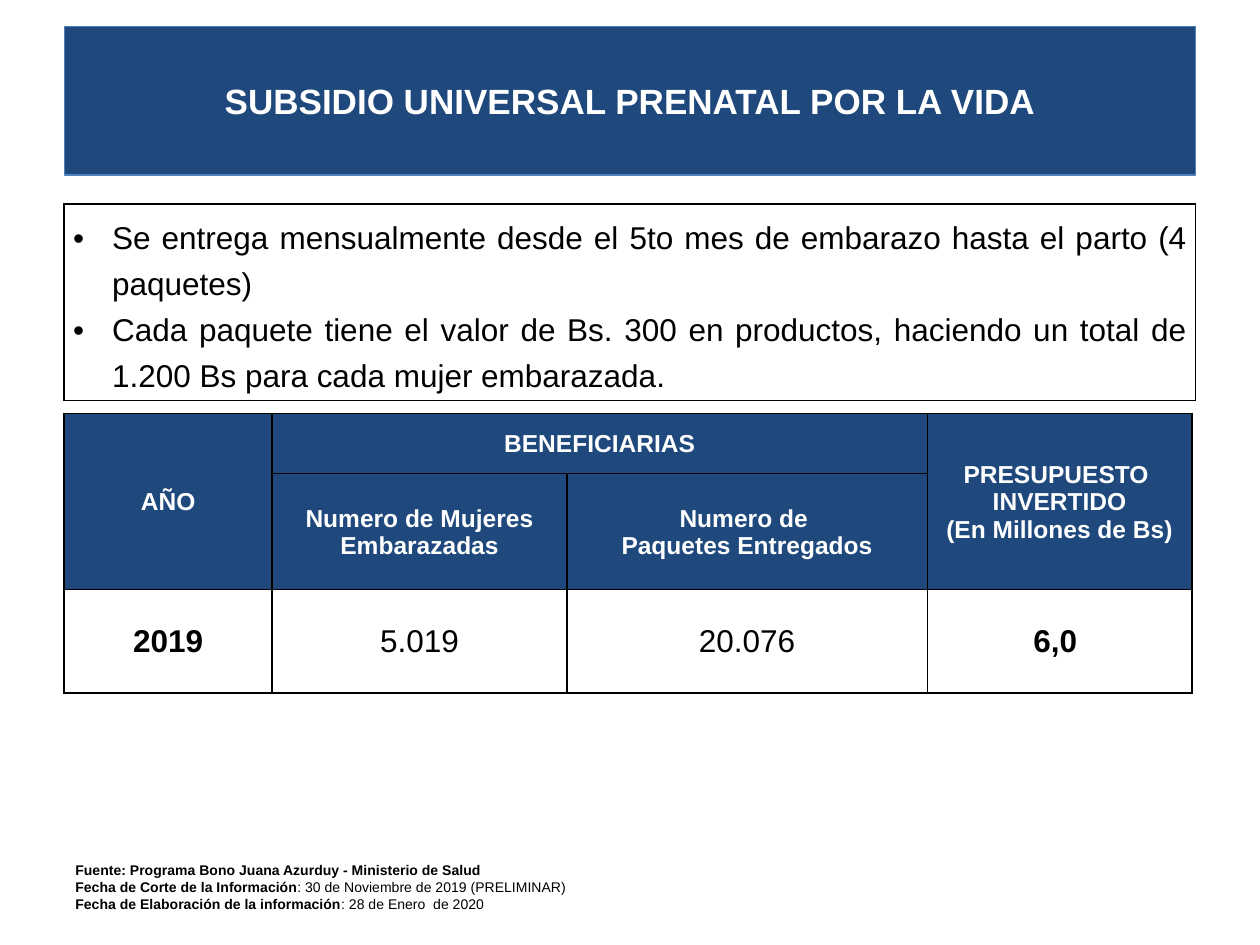
from lxml import etree
from pptx import Presentation
from pptx import util as u
from pptx.dml import color
from pptx.enum import text
from pptx.oxml import ns

NAVY, BLUE, WHITE, BLACK = "1F497D", "4F81BD", "FFFFFF", "000000"
LEFT, WIDTH = 0.51, 8.98
CENTER = {"alignment": text.PP_ALIGN.CENTER}
BULLET = {"alignment": text.PP_ALIGN.JUSTIFY, "line_spacing": 1.3}


def rgb(value):
    return color.RGBColor.from_string(value)


def apply(target, values):
    for name, value in values.items():
        setattr(target, name, value)


def paint(fill, value):
    fill.solid()
    fill.fore_color.rgb = rgb(value)


def add_element(parent, tag, **attributes):
    return etree.SubElement(parent, ns.qn(tag), attributes)


class SlideBuilder:
    font = "Arial"

    def __init__(self, deck):
        self.page = deck.slides.add_slide(deck.slide_layouts[5])

    def fill_text(self, frame, lines, size, ink, bold=False, layout=None, bullet=False):
        for index, line in enumerate(lines):
            para = frame.paragraphs[0] if index == 0 else frame.add_paragraph()
            apply(para, layout or {})
            spans = [(line, bold)] if isinstance(line, str) else line
            for content, weight in spans:
                for part, piece in enumerate(content.split("\v")):
                    if part:
                        para.add_line_break()
                    span = para.add_run()
                    span.text = piece
                    apply(span.font, {"name": self.font, "size": u.Pt(size), "bold": weight})
                    span.font.color.rgb = rgb(ink)
            if bullet:
                properties = para._p.get_or_add_pPr()
                properties.set("marL", str(u.Inches(0.31)))
                properties.set("indent", str(-u.Inches(0.31)))
                add_element(properties, "a:buFont", typeface=self.font)
                add_element(properties, "a:buChar", char="•")

    def place(self, shape, left, top, width, height):
        apply(shape, {"left": u.Inches(left), "top": u.Inches(top),
                      "width": u.Inches(width), "height": u.Inches(height)})

    def title(self, content, *area):
        box = self.page.shapes.title
        self.place(box, *area)
        paint(box.fill, NAVY)
        box.line.color.rgb = rgb(BLUE)
        box.line.width = u.Pt(0.75)
        apply(box.text_frame, {"vertical_anchor": text.MSO_ANCHOR.MIDDLE, "word_wrap": True,
                               "auto_size": text.MSO_AUTO_SIZE.NONE})
        self.fill_text(box.text_frame, [content], 20, WHITE, True, CENTER)

    def table(self, left, top, columns, rows):
        area = map(u.Inches, (left, top, sum(columns), sum(rows)))
        grid = self.page.shapes.add_table(len(rows), len(columns), *area).table
        apply(grid, {"first_row": False, "horz_banding": False})
        for column, width in zip(grid.columns, columns):
            column.width = u.Inches(width)
        for row, height in zip(grid.rows, rows):
            row.height = u.Inches(height)
        return grid

    def cell(self, cell, fill, margins):
        names = ("margin_left", "margin_top", "margin_right", "margin_bottom")
        apply(cell, dict(zip(names, map(u.Inches, margins))))
        cell.vertical_anchor = text.MSO_ANCHOR.MIDDLE
        properties = cell._tc.get_or_add_tcPr()
        for side in ("a:lnL", "a:lnR", "a:lnT", "a:lnB"):
            border = add_element(properties, side, w=str(u.Pt(1)))
            add_element(add_element(border, "a:solidFill"), "a:srgbClr", val=BLACK)
        paint(cell.fill, fill)

    def note(self, lines, size, *area):
        box = self.page.shapes.add_textbox(*map(u.Inches, area))
        apply(box.text_frame, {"word_wrap": True, "auto_size": text.MSO_AUTO_SIZE.SHAPE_TO_FIT_TEXT})
        self.fill_text(box.text_frame, lines, size, BLACK, True)


def add_description(builder):
    cell = builder.table(LEFT, 1.62, [WIDTH], [1.56]).cell(0, 0)
    builder.cell(cell, WHITE, (0.07, 0, 0.07, 0))
    builder.fill_text(cell.text_frame, [
        "Se entrega mensualmente desde el 5to mes de embarazo hasta el parto (4 paquetes) ",
        "Cada paquete tiene el valor de Bs. 300 en productos, haciendo un total de "
        "1.200 Bs para cada mujer embarazada.",
    ], 18, BLACK, layout=BULLET, bullet=True)


def add_results(builder):
    grid = builder.table(LEFT, 3.28, [1.65, 2.34, 2.86, 2.1], [0.48, 0.92, 0.82])
    for start, end in (((0, 0), (1, 0)), ((0, 1), (0, 2)), ((0, 3), (1, 3))):
        grid.cell(*start).merge(grid.cell(*end))
    content = [
        [["AÑO"], ["BENEFICIARIAS"], [],
         ["PRESUPUESTO ", "INVERTIDO", "(En Millones de Bs)"]],
        [[], ["Numero de Mujeres\vEmbarazadas"], ["Numero de ", "Paquetes Entregados"], []],
        [["2019"], ["5.019"], ["20.076"], ["6,0 "]],
    ]
    for row, values in enumerate(content):
        header = row < 2
        fill, ink, size = (NAVY, WHITE, 14) if header else (WHITE, BLACK, 18)
        for column, lines in enumerate(values):
            cell = grid.cell(row, column)
            builder.cell(cell, fill, (0.01, 0.01, 0.01, 0))
            builder.fill_text(cell.text_frame, lines, size, ink, header or column in (0, 3), CENTER)


def main():
    deck = Presentation()
    apply(deck, {"slide_width": u.Inches(10), "slide_height": u.Inches(7.5)})
    builder = SlideBuilder(deck)
    builder.title("SUBSIDIO UNIVERSAL PRENATAL POR LA VIDA", LEFT, 0.21, WIDTH, 1.18)
    add_description(builder)
    add_results(builder)
    builder.note([
        "Fuente: Programa Bono Juana Azurduy - Ministerio de Salud",
        [("Fecha de Corte de la Información", True),
         (": 30 de Noviembre de 2019 (PRELIMINAR)", False)],
        [("Fecha de Elaboración de la información", True), (": 28 de Enero  de 2020", False)],
    ], 8, 0.5, 6.79, 8.96, 0.5)
    deck.save("out.pptx")


if __name__ == "__main__":
    main()
